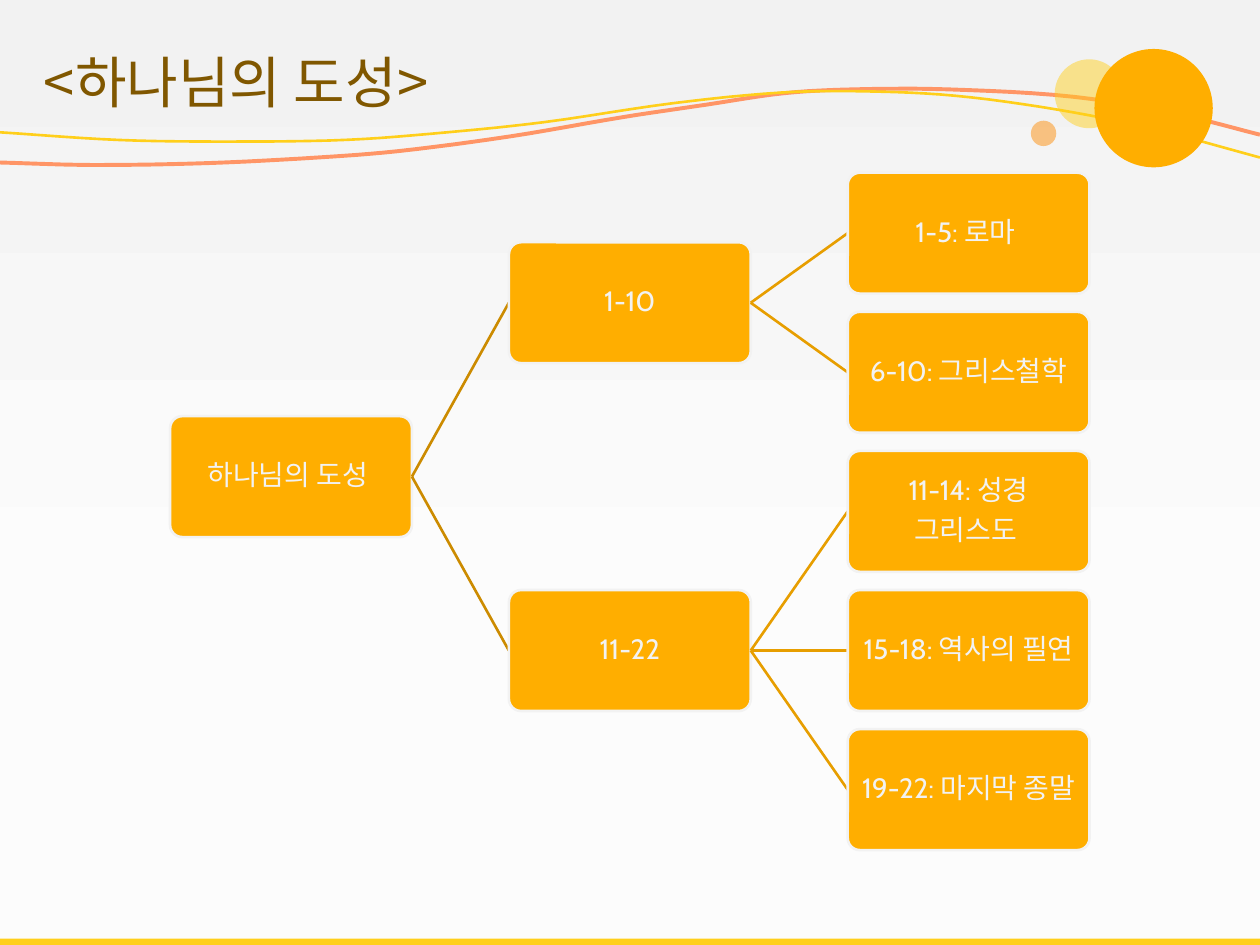
from lxml.etree import SubElement
from pptx import Presentation
from pptx.dml.color import RGBColor
from pptx.enum.shapes import MSO_CONNECTOR as CONN, MSO_SHAPE as SHAPE
from pptx.enum.text import MSO_ANCHOR as ANCHOR, PP_ALIGN as ALIGN
from pptx.oxml.ns import qn
from pptx.util import Pt

TITLE = "<하나님의 도성>"
TREE = ("하나님의 도성 ", [
    ("1-10", [("1-5: 로마 ", []), ("6-10: 그리스철학", [])]),
    ("11-22", [("11-14: 성경\n그리스도 ", []),
               ("15-18: 역사의 필연", []),
               ("19-22: 마지막 종말", [])]),
])
COLORS = {
    "top": "F2F2F2", "bottom": "FCFCFC", "title": "805700",
    "orange": "FFAE00", "yellow": "FFCF1B", "deep": "FD8A03",
    "coral": "FF9566", "light": "F2F2F2",
    "link0": "CC8B00", "link1": "E79E00",
}
WAVES = [
    ("coral", 2.25, [(0, 92.9), (52.8, 94.3), (119.5, 93.2), (182, 90),
                     (227.5, 86.4), (292, 77.9), (356.4, 66.9), (404, 59.8),
                     (448, 53.3), (488, 51.1), (541.4, 51.1), (614, 55.4),
                     (674, 65.5), (720, 77)]),
    ("yellow", 1.5, [(0, 75.6), (68.4, 80), (132.5, 80.9), (198.7, 79.9),
                     (255.6, 75.6), (311, 69.8), (384.5, 59), (446.4, 52.9),
                     (494.6, 52.2), (545.8, 54.7), (604, 62.6), (658, 73.4),
                     (720, 90)]),
]
CIRCLES = [(602.7, 33.9, 39.4, "yellow", 48), (625.4, 28, 67.6, "orange", 100),
           (589.1, 69, 14.5, "deep", 48)]
BOX_W, BOX_H = 138.2, 69.1
TREE_X, TREE_Y = 97.2, 98.7
COL_STEP, ROW_STEP = 193.6, 79.5
KOREAN = "Noto Sans CJK KR"


def rgb(name):
    return RGBColor.from_string(COLORS[name])


def set_line(sp, color, width):
    sp.line.color.rgb = rgb(color)
    sp.line.width = Pt(width)


def write(sp, text, size=16, font="Cabin", color="light", align=ALIGN.CENTER,
          margins=(3, 3), spacing=0.9, after=5.6):
    tf = sp.text_frame
    tf.word_wrap = True
    tf.vertical_anchor = ANCHOR.MIDDLE
    tf.margin_left = tf.margin_right = Pt(margins[0])
    tf.margin_top = tf.margin_bottom = Pt(margins[1])
    for i, line in enumerate(text.split("\n")):
        p = tf.add_paragraph() if i else tf.paragraphs[0]
        p.alignment, p.line_spacing, p.space_after = align, spacing, Pt(after)
        r = p.add_run()
        r.text = line
        r.font.size, r.font.name = Pt(size), font
        r.font.color.rgb = rgb(color)
        SubElement(r.font._element, qn("a:ea")).set("typeface", KOREAN)


def add_shape(kind, x, y, w, h, color, opacity=100):
    sp = s.shapes.add_shape(kind, Pt(x), Pt(y), Pt(w), Pt(h))
    sp.shadow.inherit = False
    sp.fill.solid()
    sp.fill.fore_color.rgb = rgb(color)
    sp.line.fill.background()
    if opacity < 100:
        clr = sp._element.spPr.find(qn("a:solidFill"))[0]
        SubElement(clr, qn("a:alpha")).set("val", str(opacity * 1000))
    return sp


def smooth_points(knots, steps=6):
    slopes = []
    for i in range(len(knots)):
        (x0, y0), (x1, y1) = knots[max(i - 1, 0)], knots[min(i + 1, len(knots) - 1)]
        slopes.append((y1 - y0) / (x1 - x0))
    points = [knots[0]]
    for (x0, y0), (x1, y1), m0, m1 in zip(knots, knots[1:], slopes, slopes[1:]):
        w = x1 - x0
        for k in range(1, steps + 1):
            t = k / steps
            y = ((2 * t**3 - 3 * t**2 + 1) * y0 + (t**3 - 2 * t**2 + t) * w * m0
                 + (3 * t**2 - 2 * t**3) * y1 + (t**3 - t**2) * w * m1)
            points.append((x0 + w * t, y))
    return points


def add_wave(color, width, knots):
    points = [(Pt(x), Pt(y)) for x, y in smooth_points(knots)]
    builder = s.shapes.build_freeform(*points[0])
    builder.add_line_segments(points[1:], close=False)
    sp = builder.convert_to_shape()
    sp.shadow.inherit = False
    sp.fill.background()
    set_line(sp, color, width)


def add_link(x, y0, y1, color):
    link = s.shapes.add_connector(CONN.STRAIGHT, Pt(x), Pt(y0),
                                  Pt(x + COL_STEP - BOX_W), Pt(y1))
    set_line(link, color, 1.5)
    SubElement(link._element.spPr, qn("a:effectLst"))


def place(node, rows):
    text, children = node
    placed = [place(child, rows) for child in children]
    if placed:
        middle = (placed[0][1] + placed[-1][1]) / 2
    else:
        middle = TREE_Y + BOX_H / 2 + next(rows) * ROW_STEP
    return text, middle, placed


def draw(node, depth=0):
    text, middle, children = node
    x = TREE_X + depth * COL_STEP
    sp = add_shape(SHAPE.ROUNDED_RECTANGLE, x, middle - BOX_H / 2, BOX_W, BOX_H, "orange")
    sp.adjustments[0] = 0.1
    set_line(sp, "light", 1.5)
    write(sp, text)
    for child in children:
        add_link(x + BOX_W, middle, child[1], f"link{depth}")
        draw(child, depth + 1)


prs = Presentation()
prs.slide_width, prs.slide_height = Pt(720), Pt(540)
s = prs.slides.add_slide(prs.slide_layouts[6])

bg = s.background.fill
bg.gradient()
bg.gradient_angle = 270
for stop, position, color in zip(bg.gradient_stops, (0, 0.67), ("top", "bottom")):
    stop.position = position
    stop.color.rgb = rgb(color)

for wave in WAVES:
    add_wave(*wave)
for x, y, size, color, opacity in CIRCLES:
    add_shape(SHAPE.OVAL, x, y, size, size, color, opacity)
add_shape(SHAPE.RECTANGLE, 0, 536.4, 720, 3.6, "yellow")

title = s.shapes.add_textbox(Pt(18), Pt(13.7), Pt(683.3), Pt(65.5))
write(title, TITLE, size=32, font=KOREAN, color="title", align=ALIGN.LEFT,
      margins=(7.2, 3.6), spacing=1.0, after=0)

draw(place(TREE, iter(range(5))))

prs.save("out.pptx")
